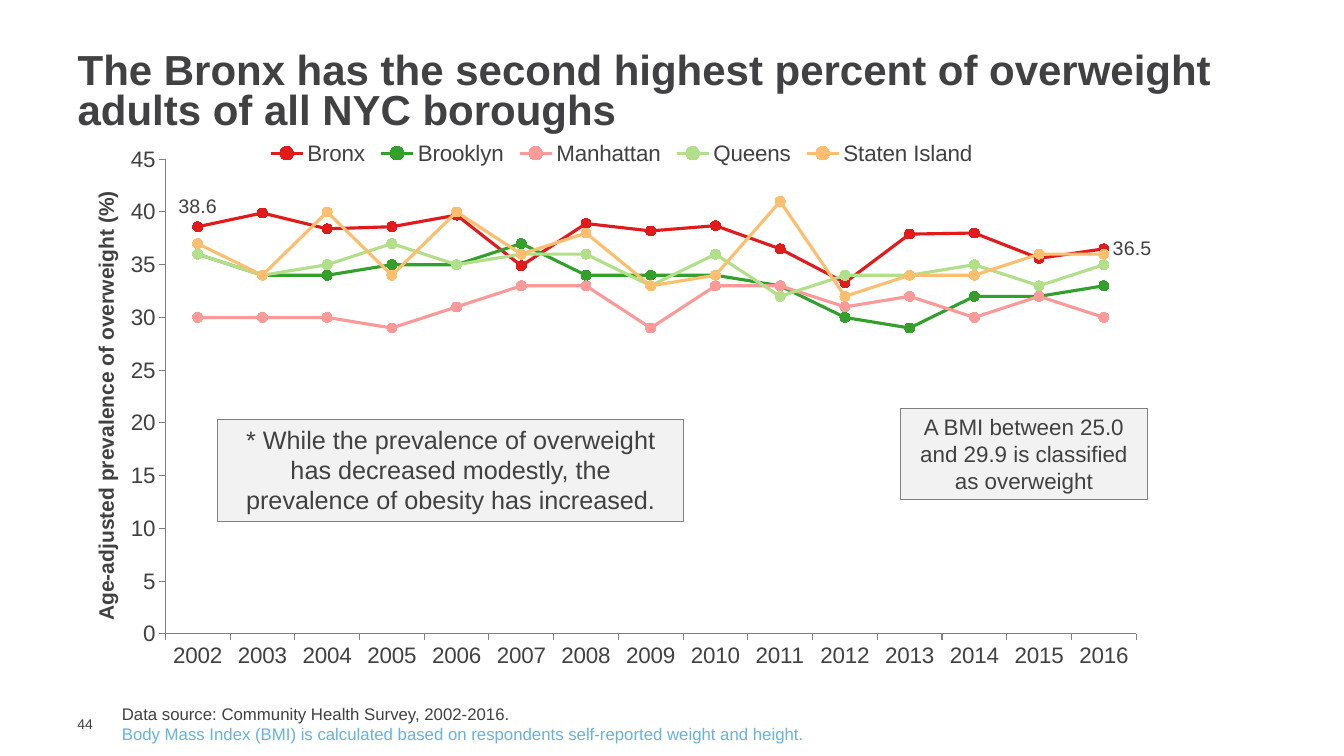
from lxml import etree
from pptx import Presentation
from pptx.chart.data import CategoryChartData
from pptx.dml.color import RGBColor
from pptx.enum import chart as ch, shapes, text
from pptx.oxml.ns import qn
from pptx.util import Inches, Pt

TITLE = "The Bronx has the second highest percent of overweight adults of all NYC boroughs"
PAGE = "44"
AXIS_TITLE = "Age-adjusted prevalence of overweight (%)"
YEARS = [str(year) for year in range(2002, 2017)]
BOROUGHS = {
    "Bronx": (38.6, 39.9, 38.4, 38.6, 39.7, 34.9, 38.9, 38.2, 38.7, 36.5, 33.3, 37.9, 38, 35.6, 36.5),
    "Brooklyn": (36, 34, 34, 35, 35, 37, 34, 34, 34, 33, 30, 29, 32, 32, 33),
    "Manhattan": (30, 30, 30, 29, 31, 33, 33, 29, 33, 33, 31, 32, 30, 32, 30),
    "Queens": (36, 34, 35, 37, 35, 36, 36, 33, 36, 32, 34, 34, 35, 33, 35),
    "Staten Island": (37, 34, 40, 34, 40, 36, 38, 33, 34, 41, 32, 34, 34, 36, 36),
}
BRONX_LABELS = {0: ch.XL_LABEL_POSITION.ABOVE, 14: ch.XL_LABEL_POSITION.RIGHT}
# text, size, box
CALLOUTS = [
    ("A BMI between 25.0 and 29.9 is classified as overweight", 16, (8.93, 4.05, 2.45, 0.91)),
    ("* While the prevalence of overweight has decreased modestly, "
     "the prevalence of obesity has increased.", 18, (2.16, 4.16, 4.62, 1.01)),
]
FOOTNOTES = [
    ("Data source: Community Health Survey, 2002-2016.", "text"),
    ("Body Mass Index (BMI) is calculated based on respondents self-reported weight and height.", "note"),
]
CHART_BOX = (0.88, 1.28, 10.57, 5.65)
COLORS = {
    "text": "414042", "note": "66B2E5", "callout": "F2F2F2", "rule": "808080",
    "Bronx": "E31A1C", "Brooklyn": "33A02C", "Manhattan": "FB9A99",
    "Queens": "B2DF8A", "Staten Island": "FDBF6F",
}


def rgb(name):
    return RGBColor.from_string(COLORS[name])


def box(sizes):
    return [Inches(size) for size in sizes]


def style(font, size, color="text", bold=False):
    font.name, font.size, font.bold = "Arial", Pt(size), bold
    font.color.rgb = rgb(color)


def place(part, after, inches, inner=False):
    """Put a chart part, behind its child named after, at inches from the chart's corner."""
    for old in part.findall(qn("c:layout")):
        part.remove(old)
    width, height = CHART_BOX[2:]
    layout = {"layoutTarget": "inner"} if inner else {}
    layout.update(xMode="edge", yMode="edge")
    layout.update((tag, length / whole) for tag, length, whole
                  in zip("xywh", inches, (width, height, width, height)))
    holder = etree.Element(qn("c:layout"))
    manual = etree.SubElement(holder, qn("c:manualLayout"))
    for tag, value in layout.items():
        etree.SubElement(manual, qn("c:" + tag)).set("val", str(value))
    previous = part.find(qn(after)) if after else None
    part.insert(0 if previous is None else part.index(previous) + 1, holder)


def add_trend_chart(slide):
    data = CategoryChartData(number_format="General")
    data.categories = YEARS
    for borough, values in BOROUGHS.items():
        data.add_series(borough, values)
    chart = slide.shapes.add_chart(
        ch.XL_CHART_TYPE.LINE_MARKERS, *box(CHART_BOX), data).chart
    style(chart.font, 16)
    chart.has_title = False
    chart.plots[0].vary_by_categories = False

    chart.has_legend = True
    chart.legend.position = ch.XL_LEGEND_POSITION.TOP
    chart.legend.include_in_layout = False
    place(chart.legend._element, "c:legendPos", (1.72, 0.1, 7.13, 0.28))
    place(chart._chartSpace.chart.plotArea, None, (0.76, 0.3, 9.63, 4.71), inner=True)

    prevalence = chart.value_axis
    prevalence.minimum_scale, prevalence.maximum_scale, prevalence.major_unit = 0, 45, 5
    prevalence.has_major_gridlines = False
    for axis in (prevalence, chart.category_axis):
        axis.major_tick_mark = ch.XL_TICK_MARK.OUTSIDE
        axis.format.line.color.rgb = rgb("rule")
        axis.format.line.width = Pt(0.75)
    caption = prevalence.axis_title.text_frame.paragraphs[0]
    caption.text = AXIS_TITLE
    style(caption.font, 15, bold=True)
    place(prevalence.axis_title._element, "c:tx", (0, 0.58))

    for series in chart.plots[0].series:
        color = rgb(series.name)
        series.smooth = False
        series.format.line.color.rgb = color
        series.format.line.width = Pt(2.25)
        series.marker.style = ch.XL_MARKER_STYLE.CIRCLE
        series.marker.size = 7
        series.marker.format.fill.solid()
        series.marker.format.fill.fore_color.rgb = color
        series.marker.format.line.color.rgb = color
    bronx = chart.plots[0].series[0]
    bronx.data_labels.show_value = False
    for index, position in BRONX_LABELS.items():
        label = bronx.points[index].data_label
        style(label.font, 14)
        label.position = position


def add_callout(slide, words, size, sizes):
    callout = slide.shapes.add_shape(shapes.MSO_SHAPE.RECTANGLE, *box(sizes))
    callout.shadow.inherit = False
    callout.fill.solid()
    callout.fill.fore_color.rgb = rgb("callout")
    callout.line.color.rgb = rgb("rule")
    callout.line.width = Pt(0.75)
    frame = callout.text_frame
    frame.word_wrap = True
    frame.vertical_anchor = text.MSO_ANCHOR.TOP
    frame.text = words
    frame.paragraphs[0].alignment = text.PP_ALIGN.CENTER
    style(frame.paragraphs[0].font, size)


def main():
    deck = Presentation()
    deck.slide_width, deck.slide_height = box((13.33, 7.5))
    slide = deck.slides.add_slide(deck.slide_layouts[5])

    title = slide.shapes.title
    title.left, title.top, title.width, title.height = box((0.67, 0.47, 12.11, 0.91))
    title.text_frame.text = TITLE
    title.text_frame.vertical_anchor = text.MSO_ANCHOR.MIDDLE
    headline = title.text_frame.paragraphs[0]
    headline.alignment = text.PP_ALIGN.LEFT
    headline.line_spacing = 0.8
    style(headline.font, 30, bold=True)

    page = slide.shapes.add_textbox(*box((0.67, 7.1, 0.43, 0.17))).text_frame
    page.margin_top = page.margin_bottom = page.margin_right = 0
    page.vertical_anchor = text.MSO_ANCHOR.MIDDLE
    page.text = PAGE
    style(page.paragraphs[0].font, 10)

    footer = slide.shapes.add_textbox(*box((1.11, 6.93, 9.71, 0.5))).text_frame
    footer.word_wrap = True
    footer.text = "\n".join(words for words, _ in FOOTNOTES)
    for paragraph, (_, color) in zip(footer.paragraphs, FOOTNOTES):
        style(paragraph.font, 12, color)

    add_trend_chart(slide)
    for callout in CALLOUTS:
        add_callout(slide, *callout)
    deck.save("out.pptx")


if __name__ == "__main__":
    main()
